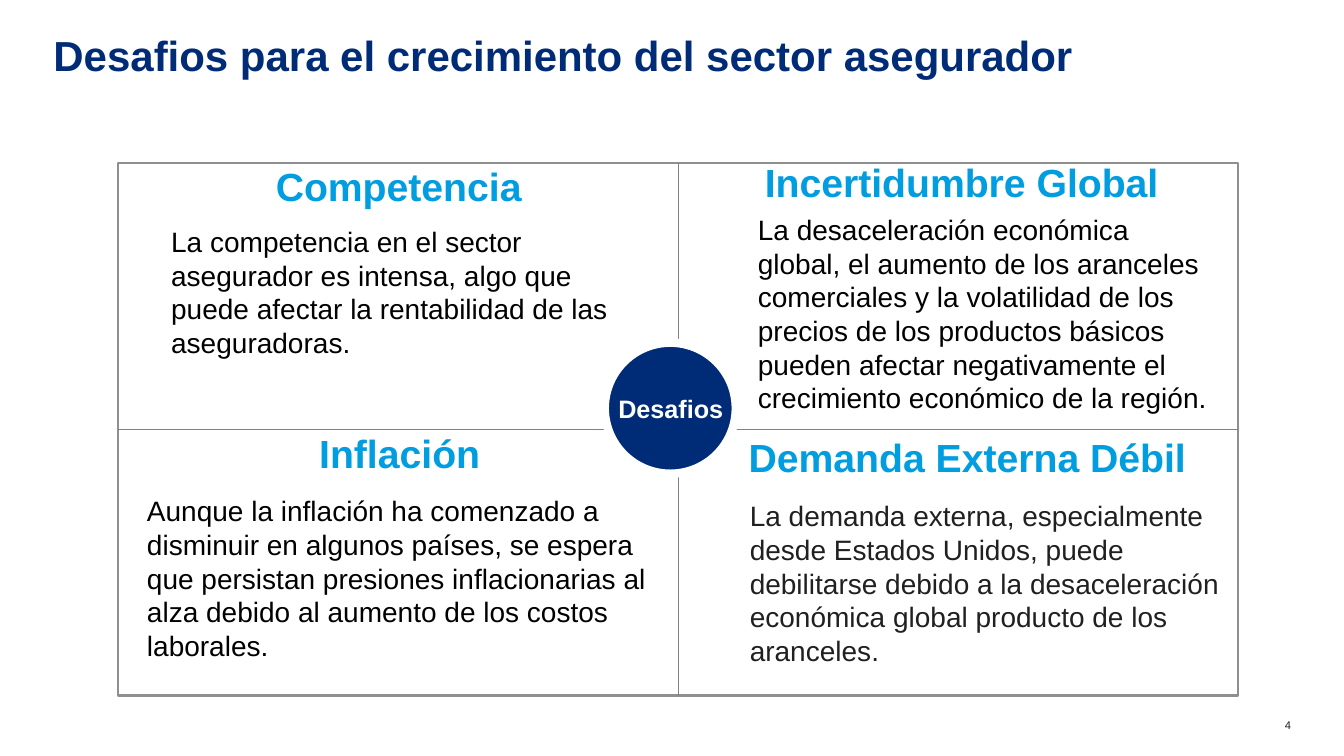
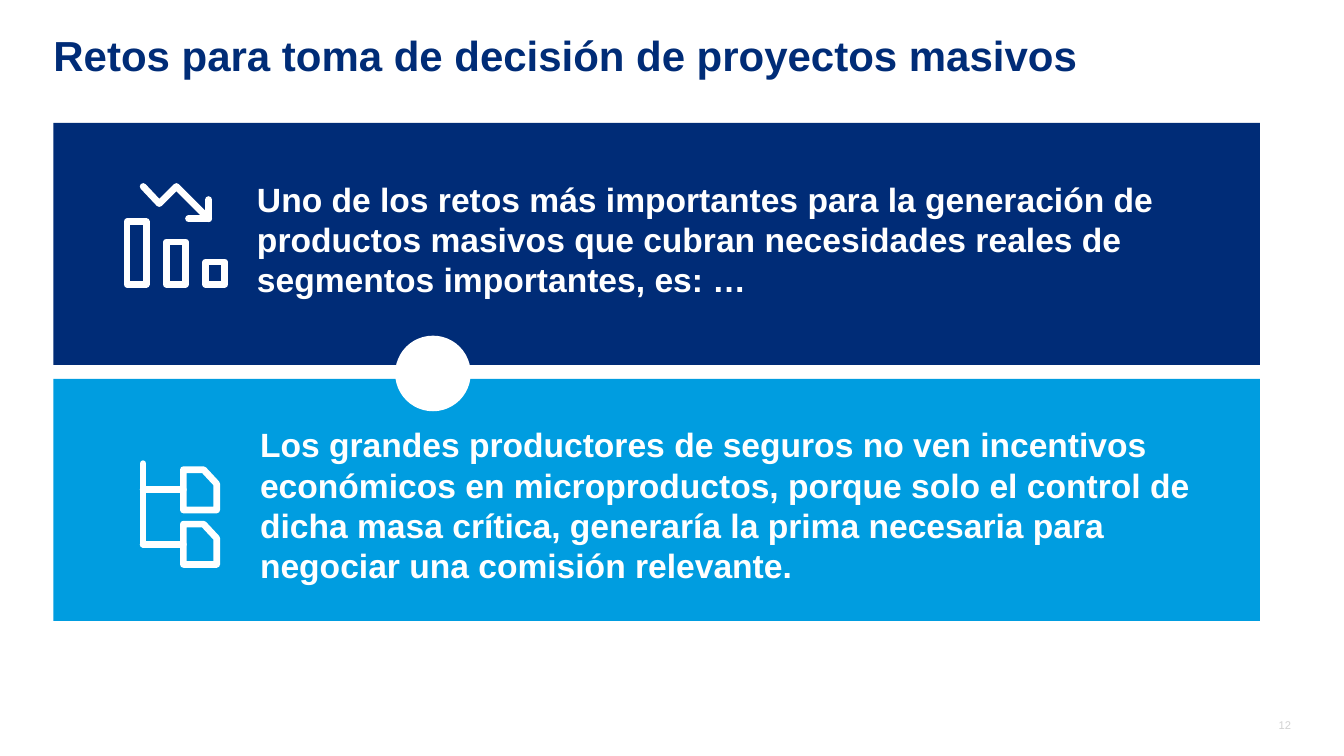
"""Build two slides on the challenges of the insurance sector."""
from pptx import Presentation
from pptx import util as u
from pptx.dml.color import RGBColor
from pptx.enum import shapes, text
from pptx.oxml import ns
from lxml import etree

PX = 9144
FONT = "Arial"
NAVY, SKY, WHITE, BLACK, INK = "002C77", "009DE0", "FFFFFF", "000000", "202020"
FRAME, RULE, PALE = "8F8F8F", "7C848A", "D2D2D2"
PADDING = (10, 5)

CHALLENGES = {
    "title": "Desafios para el crecimiento del sector asegurador",
    "page": "4",
    "hub": "Desafios",
    "quadrants": [
        ("Competencia", (120, 163, 551, 51),
         "La competencia en el sector asegurador es intensa, algo que puede afectar "
         "la rentabilidad de las aseguradoras.", (160, 218, 484, 145), BLACK),
        ("Incertidumbre Global", (677, 159, 554, 51),
         "La desaceleración económica global, el aumento de los aranceles comerciales "
         "y la volatilidad de los precios de los productos básicos pueden afectar "
         "negativamente el crecimiento económico de la región.", (742, 206, 475, 246), BLACK),
        ("Inflación", (121, 428, 551, 51),
         "Aunque la inflación ha comenzado a disminuir en algunos países, se espera que "
         "persistan presiones inflacionarias al alza debido al aumento de los costos "
         "laborales.", (136, 485, 516, 178), BLACK),
        ("Demanda Externa Débil", (682, 432, 555, 51),
         "La demanda externa, especialmente desde Estados Unidos, puede debilitarse "
         "debido a la desaceleración económica global producto de los aranceles.",
         (734, 490, 497, 178), INK),
    ],
}

BAR_BASE, BAR_WIDTH = 282, 19
BARS = [(126, 220), (165, 240), (204, 260)]
TREND = [
    ([(142, 185), (158, 202), (175, 185), (207, 217)], False),
    ([(207, 198), (207, 217), (187, 217)], False),
]
FALLING_CHART = [TREND] + [
    [([(x, top), (x + BAR_WIDTH, top), (x + BAR_WIDTH, BAR_BASE), (x, BAR_BASE)], True)]
    for x, top in BARS
]
BRANCHES = [486, 540]
PAGE_OUTLINE = [(182, -20), (202, -20), (215, -6), (215, 20), (182, 20)]
FOLDER_TREE = [[([(142, 460), (142, BRANCHES[-1])], False)] + [
    stroke for y in BRANCHES for stroke in (
        ([(142, y), (182, y)], False),
        ([(x, y + dy) for x, dy in PAGE_OUTLINE], True))
]]

RETOS = {
    "title": "Retos para toma de decisión de proyectos masivos",
    "page": "12",
    "bands": [
        (NAVY, FALLING_CHART, (255, 177, 930, 121),
         "Uno de los retos más importantes para la generación de productos masivos que "
         "cubran necesidades reales de segmentos importantes, es: …"),
        (SKY, FOLDER_TREE, (258, 421, 939, 162),
         "Los grandes productores de seguros no ven incentivos económicos en "
         "microproductos, porque solo el control de dicha masa crítica, generaría la "
         "prima necesaria para negociar una comisión relevante."),
    ],
}


def emu(*lengths):
    return [u.Emu(length * PX) for length in lengths]


def rgb(value):
    return RGBColor.from_string(value)


def write(frame, words, size, color, bold=False, align=text.PP_ALIGN.LEFT,
          spacing=1.0, padding=(0, 0)):
    frame.text = words
    frame.word_wrap = True
    frame.auto_size = text.MSO_AUTO_SIZE.NONE
    frame.vertical_anchor = text.MSO_ANCHOR.TOP
    frame.margin_left = frame.margin_right = u.Emu(padding[0] * PX)
    frame.margin_top = frame.margin_bottom = u.Emu(padding[1] * PX)
    paragraph = frame.paragraphs[0]
    paragraph.alignment = align
    paragraph.line_spacing = spacing
    for run in paragraph.runs:
        run.font.name, run.font.size, run.font.bold = FONT, u.Pt(size), bold
        run.font.color.rgb = rgb(color)


def add_text(slide, box, words, size, color, **style):
    write(slide.shapes.add_textbox(*emu(*box)).text_frame, words, size, color, **style)


def outline(part, color, width):
    part.line.color.rgb = rgb(color)
    part.line.width = u.Pt(width)


def add_block(slide, kind, box, fill, line=None):
    block = slide.shapes.add_shape(kind, *emu(*box))
    block.shadow.inherit = False
    block.fill.solid()
    block.fill.fore_color.rgb = rgb(fill)
    if line:
        outline(block, *line)
    else:
        block.line.fill.background()


def add_rule(slide, *ends):
    rule = slide.shapes.add_connector(shapes.MSO_CONNECTOR.STRAIGHT, *emu(*ends))
    outline(rule, RULE, 0.75)
    etree.SubElement(rule._element.spPr, ns.qn("a:effectLst"))


def add_icon(slide, pieces):
    for strokes in pieces:
        builder = slide.shapes.build_freeform(*strokes[0][0][0], scale=PX)
        for index, (points, closed) in enumerate(strokes):
            if index:
                builder.move_to(*points[0])
            builder.add_line_segments(points[1:], close=closed)
        piece = builder.convert_to_shape()
        piece.shadow.inherit = False
        piece.fill.background()
        outline(piece, WHITE, 4.8)
        pen = piece._element.spPr.find(ns.qn("a:ln"))
        pen.set("cap", "rnd")
        etree.SubElement(pen, ns.qn("a:round"))


def start_slide(deck, content, page_color):
    slide = deck.slides.add_slide(deck.slide_layouts[5])
    title = slide.shapes.title
    title.left, title.top, title.width, title.height = emu(53, 39, 1227, 54)
    write(title.text_frame, content["title"], 30, NAVY, bold=True, spacing=0.8)
    add_text(slide, (1250, 713, 31, 13), content["page"], 8, page_color,
             align=text.PP_ALIGN.RIGHT)
    return slide


def build_challenges(deck):
    slide = start_slide(deck, CHALLENGES, INK)
    left, top, width, height = grid = (117, 162, 1111, 528)
    middle_x, middle_y = left + width // 2 + 1, top + height // 2
    add_block(slide, shapes.MSO_SHAPE.RECTANGLE, grid, WHITE, (FRAME, 1.5))
    add_rule(slide, middle_x, top, middle_x, top + height)
    add_rule(slide, left, middle_y, left + width, middle_y)
    for heading, heading_box, body, body_box, body_color in CHALLENGES["quadrants"]:
        add_text(slide, body_box, body, 20, body_color, padding=PADDING)
        add_text(slide, heading_box, heading, 28, SKY, bold=True, spacing=0.86,
                 align=text.PP_ALIGN.CENTER, padding=PADDING)
    add_block(slide, shapes.MSO_SHAPE.OVAL, (600, 340, 130, 130), NAVY, (WHITE, 6))
    add_text(slide, (601, 395, 129, 26), CHALLENGES["hub"], 18, WHITE, bold=True,
             spacing=0.86, align=text.PP_ALIGN.CENTER)


def build_retos(deck):
    slide = start_slide(deck, RETOS, PALE)
    top, height, gap = 122, 240, 14
    for row, (fill, icon, box, words) in enumerate(RETOS["bands"]):
        band = (53, top + row * (height + gap), 1197, height)
        add_block(slide, shapes.MSO_SHAPE.RECTANGLE, band, fill)
        add_icon(slide, icon)
        add_text(slide, box, words, 24, WHITE, bold=True)
    add_block(slide, shapes.MSO_SHAPE.OVAL, (392, 333, 75, 75), WHITE)


def main():
    deck = Presentation()
    deck.slide_width, deck.slide_height = u.Emu(12192000), u.Emu(6858000)
    build_challenges(deck)
    build_retos(deck)
    deck.save("out.pptx")


if __name__ == "__main__":
    main()
